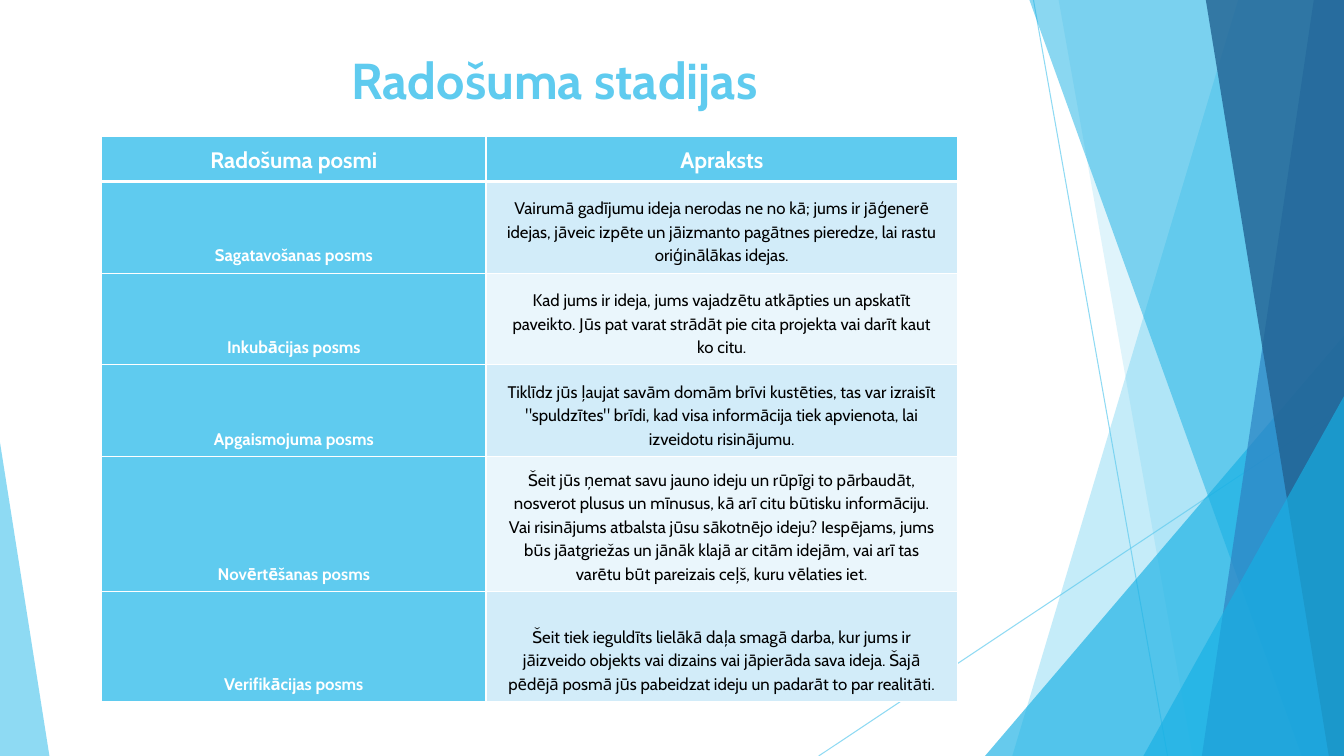
from dataclasses import dataclass

from pptx import Presentation
from pptx.dml.color import RGBColor
from pptx.enum.shapes import MSO_CONNECTOR as Link, MSO_SHAPE as Preset
from pptx.enum.text import MSO_ANCHOR as Anchor, PP_ALIGN as Align
from pptx.oxml import parse_xml
from pptx.oxml.ns import nsdecls, qn
from pptx.util import Inches, Pt


@dataclass(frozen=True)
class Theme:
    font: str = "Cabin"
    sky: str = "5FCBEF"
    cyan: str = "17B0E4"
    blue: str = "2E83C3"
    navy: str = "226292"
    band: tuple = ("D2ECF9", "EAF6FC")
    white: str = "FFFFFF"
    black: str = "000000"
    title: int = 36
    head: int = 16
    body: int = 12


LOOK = Theme()

# Panels: top x, foot x, top y, colour, opacity; a top y of 0 means full height
PANELS = [
    (4.16, 1.92, 0, LOOK.sky, 36),
    (2.38, 3.71, 0, LOOK.sky, 20),
    (5.21, 1.65, 3.33, LOOK.cyan, 66),
    (2.09, 4.79, 0, LOOK.cyan, 50),
    (4.91, 3.8, 0, LOOK.blue, 70),
    (3.84, 5.06, 0, LOOK.navy, 80),
    (5.21, 3.22, 3.93, LOOK.cyan, 66),
]
RAYS = [(2.13, 0, 3.46, 7.5), (5.21, 4.03, 0, 7.5)]

COLS = [3.81, 4.68]
ROWS = [0.45, 0.91, 0.91, 0.91, 1.34, 1.09]
STAGES = [
    ("Radošuma posmi", "Apraksts"),
    ("Sagatavošanas posms",
     "Vairumā gadījumu ideja nerodas ne no kā; jums ir jāģenerē idejas, jāveic "
     "izpēte un jāizmanto pagātnes pieredze, lai rastu oriģinālākas idejas."),
    ("Inkubācijas posms",
     "Kad jums ir ideja, jums vajadzētu atkāpties un apskatīt paveikto. Jūs pat "
     "varat strādāt pie cita projekta vai darīt kaut ko citu."),
    ("Apgaismojuma posms",
     "Tiklīdz jūs ļaujat savām domām brīvi kustēties, tas var izraisīt "
     "\"spuldzītes\" brīdi, kad visa informācija tiek apvienota, lai izveidotu "
     "risinājumu."),
    ("Novērtēšanas posms",
     "Šeit jūs ņemat savu jauno ideju un rūpīgi to pārbaudāt, nosverot plusus un "
     "mīnusus, kā arī citu būtisku informāciju. Vai risinājums atbalsta jūsu "
     "sākotnējo ideju? Iespējams, jums būs jāatgriežas un jānāk klajā ar citām "
     "idejām, vai arī tas varētu būt pareizais ceļš, kuru vēlaties iet."),
    ("Verifikācijas posms",
     "Šeit tiek ieguldīts lielākā daļa smagā darba, kur jums ir jāizveido objekts "
     "vai dizains vai jāpierāda sava ideja. Šajā pēdējā posmā jūs pabeidzat ideju "
     "un padarāt to par realitāti."),
]


def apply(item, **props):
    for name, value in props.items():
        setattr(item, name, value)


def write(frame, text, size, tone, bold):
    frame.text = text
    para = frame.paragraphs[0]
    para.alignment = Align.CENTER
    font = para.runs[0].font
    apply(font, name=LOOK.font, size=Pt(size), bold=bold)
    font.color.rgb = RGBColor.from_string(tone)
    return para


def fade(shape, alpha):
    for tint in shape._element.iter(qn("a:srgbClr")):
        tint.append(parse_xml(f'<a:alpha {nsdecls("a")} val="{alpha * 1000}"/>'))


def paint(shape, tone, alpha):
    shape.shadow.inherit = False
    shape.fill.solid()
    shape.fill.fore_color.rgb = RGBColor.from_string(tone)
    shape.line.fill.background()
    fade(shape, alpha)


def add_ray(shapes, box, ends):
    left, top = box[:2]
    x1, y1, x2, y2 = ends
    ray = shapes.add_connector(Link.STRAIGHT, Inches(left + x1), Inches(top + y1),
                               Inches(left + x2), Inches(top + y2))
    ray.line.color.rgb = RGBColor.from_string(LOOK.sky)
    ray.line.width = Pt(0.75)
    fade(ray, 70)
    ray._element.spPr.append(parse_xml(f'<a:effectLst {nsdecls("a")}/>'))


def add_wedge(shapes, box, peak, tone, alpha):
    wedge = shapes.add_shape(Preset.ISOSCELES_TRIANGLE, *map(Inches, box))
    wedge.adjustments[0] = peak
    paint(wedge, tone, alpha)


def add_panel(shapes, box, head, foot, tone, alpha):
    left, top, width, height = box
    right, base = left + width, top + height
    form = shapes.build_freeform(Inches(left + head), Inches(top))
    form.add_line_segments([(Inches(x), Inches(y)) for x, y in
                            [(right, top), (right, base), (left + foot, base)]])
    paint(form.convert_to_shape(), tone, alpha)


def add_fan(shapes, box):
    left, top, width, height = box
    for ends in RAYS:
        add_ray(shapes, box, ends)
    for head, foot, drop, tone, alpha in PANELS:
        if drop:
            area = (left + foot, top + drop, width - foot, height - drop)
            add_wedge(shapes, area, 1, tone, alpha)
        else:
            add_panel(shapes, box, head, foot, tone, alpha)


def add_title(slide, box):
    left, top, width, height = map(Inches, box)
    title = slide.shapes.title
    apply(title, left=left, top=top, width=width, height=height)
    apply(title.text_frame, vertical_anchor=Anchor.TOP, word_wrap=True)
    write(title.text_frame, "Radošuma stadijas", LOOK.title, LOOK.sky, True)


def add_edges(cell, base):
    props = cell._tc.get_or_add_tcPr()
    for side, width in zip("LRTB", (1, 1, 1, base)):
        props.append(parse_xml(
            f'<a:ln{side} {nsdecls("a")} w="{Pt(width)}"><a:solidFill>'
            f'<a:srgbClr val="{LOOK.white}"/></a:solidFill></a:ln{side}>'))


def add_cell(cell, text, row, col):
    strong = row == 0 or col == 0
    add_edges(cell, 1 if row else 3)
    apply(cell, vertical_anchor=Anchor.BOTTOM,
          margin_left=Inches(0.18), margin_right=Inches(0.18),
          margin_top=Inches(0.07), margin_bottom=Inches(0.07))
    cell.fill.solid()
    tone = LOOK.sky if strong else LOOK.band[(row - 1) % 2]
    cell.fill.fore_color.rgb = RGBColor.from_string(tone)
    para = write(cell.text_frame, text, LOOK.body if row else LOOK.head,
                 LOOK.white if strong else LOOK.black, strong)
    para.line_spacing = 1.15


def add_stages(shapes, box):
    grid = shapes.add_table(len(ROWS), len(COLS), *map(Inches, box)).table
    for col, width in zip(grid.columns, COLS):
        col.width = Inches(width)
    for line, height in zip(grid.rows, ROWS):
        line.height = Inches(height)
    for row, texts in enumerate(STAGES):
        for col, text in enumerate(texts):
            add_cell(grid.cell(row, col), text, row, col)


def main():
    deck = Presentation()
    apply(deck, slide_width=Inches(13.33), slide_height=Inches(7.5))
    slide = deck.slides.add_slide(deck.slide_layouts[5])
    # Backdrop
    add_fan(slide.shapes, (8.12, 0, 5.21, 7.5))
    add_wedge(slide.shapes, (0, 4.39, 0.49, 3.11), 0, LOOK.sky, 70)
    # Content
    add_title(slide, (0.8, 0.44, 9.4, 1.44))
    add_stages(slide.shapes, (1.01, 1.35, sum(COLS), sum(ROWS)))
    deck.save("out.pptx")


if __name__ == "__main__":
    main()
